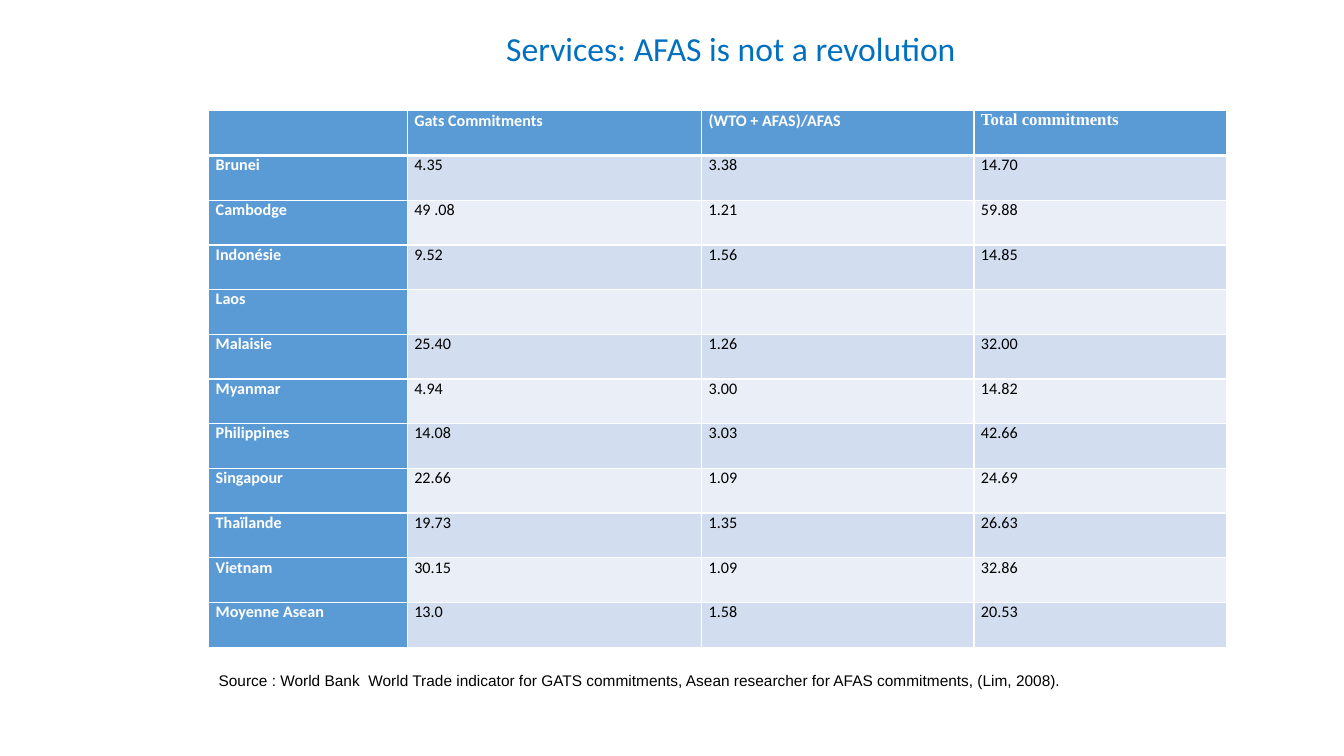
from lxml.etree import SubElement
from pptx import Presentation
from pptx.dml.color import RGBColor
from pptx.enum.text import MSO_ANCHOR, PP_ALIGN
from pptx.oxml.ns import qn
from pptx.util import Inches, Pt

WHITE, BLACK, TITLE_BLUE = "FFFFFF", "000000", "0070C0"
HEADER_BLUE, BANDS = "5B9BD5", ("D2DEEF", "EAEFF7")
COLUMN_WIDTHS = (1.97, 2.92, 2.7, 2.51)
COMMITMENTS = (
    ("", "Gats Commitments", "(WTO + AFAS)/AFAS", "Total commitments"),
    ("Brunei", "4.35", "3.38", "14.70"),
    ("Cambodge", "49 .08", "1.21", "59.88"),
    ("Indonésie", "9.52", "1.56", "14.85"),
    ("Laos", "", "", ""),
    ("Malaisie", "25.40", "1.26", "32.00"),
    ("Myanmar", "4.94", "3.00", "14.82"),
    ("Philippines", "14.08", "3.03", "42.66"),
    ("Singapour", "22.66", "1.09", "24.69"),
    ("Thaïlande", "19.73", "1.35", "26.63"),
    ("Vietnam", "30.15", "1.09", "32.86"),
    ("Moyenne Asean", "13.0", "1.58", "20.53"),
)
SOURCE = ("Source : World Bank  World Trade indicator for GATS commitments, "
          "Asean researcher for AFAS commitments, (Lim, 2008).")


def colour(value):
    return RGBColor.from_string(value)


def set_attributes(target, values):
    for name, value in values.items():
        setattr(target, name, value)


def write(frame, text, size, font, ink, bold=False, align=PP_ALIGN.JUSTIFY):
    para = frame.paragraphs[0]
    para.alignment = align
    span = para.add_run()
    span.text = text
    set_attributes(span.font, {"size": Pt(size), "name": font, "bold": bold})
    span.font.color.rgb = colour(ink)


def add_title(page, left, top, width, height):
    title = page.shapes.title
    set_attributes(title, {"left": Inches(left), "top": Inches(top),
                           "width": Inches(width), "height": Inches(height)})
    set_attributes(title.text_frame, {"word_wrap": False,
                                      "vertical_anchor": MSO_ANCHOR.TOP})
    write(title.text_frame, "Services: AFAS is not a revolution", 24, "Calibri",
          TITLE_BLUE, align=PP_ALIGN.LEFT)


def add_borders(cell, widths):
    """Draw white borders; widths maps an edge tag to points."""
    properties = cell._tc.get_or_add_tcPr()
    for edge, width in widths.items():
        line = SubElement(properties, qn(f"a:{edge}"), w=str(Pt(width)))
        fill = SubElement(line, qn("a:solidFill"))
        SubElement(fill, qn("a:srgbClr"), val=WHITE)


def format_cell(cell, text, row, column):
    is_heading = row == 0 or column == 0
    add_borders(cell, {"lnL": 1, "lnR": 1, "lnT": 3 if row == 1 else 1,
                       "lnB": 3 if row == 0 else 1})
    cell.fill.solid()
    cell.fill.fore_color.rgb = colour(HEADER_BLUE if is_heading else BANDS[(row - 1) % 2])
    set_attributes(cell, {"margin_left": Inches(0.07), "margin_right": Inches(0.07),
                          "margin_top": 0, "margin_bottom": 0})
    if text:
        is_total = row == 0 and column == 3
        size, font = (12, "Times New Roman") if is_total else (11.5, "Calibri")
        write(cell.text_frame, text, size, font, WHITE if is_heading else BLACK, is_heading)


def add_commitments_table(page, left, top, width, height):
    table = page.shapes.add_table(len(COMMITMENTS), len(COLUMN_WIDTHS), Inches(left),
                                  Inches(top), Inches(width), Inches(height)).table
    for column, column_width in zip(table.columns, COLUMN_WIDTHS):
        column.width = Inches(column_width)
    for row, texts in enumerate(COMMITMENTS):
        for column, text in enumerate(texts):
            format_cell(table.cell(row, column), text, row, column)


def add_source(page, left, top, width, height):
    box = page.shapes.add_textbox(Inches(left), Inches(top), Inches(width), Inches(height))
    set_attributes(box.text_frame, {"word_wrap": False,
                                    "vertical_anchor": MSO_ANCHOR.MIDDLE})
    write(box.text_frame, SOURCE, 11, "Arial", BLACK)


def main():
    deck = Presentation()
    set_attributes(deck, {"slide_width": Inches(13.33), "slide_height": Inches(7.5)})
    page = deck.slides.add_slide(deck.slide_layouts[5])
    add_title(page, 4.92, 0.23, 4.7, 0.5)
    add_commitments_table(page, 2.07, 1.1, sum(COLUMN_WIDTHS), 5.32)
    add_source(page, 2.07, 6.6, 8.64, 0.29)
    deck.save("out.pptx")


if __name__ == "__main__":
    main()
